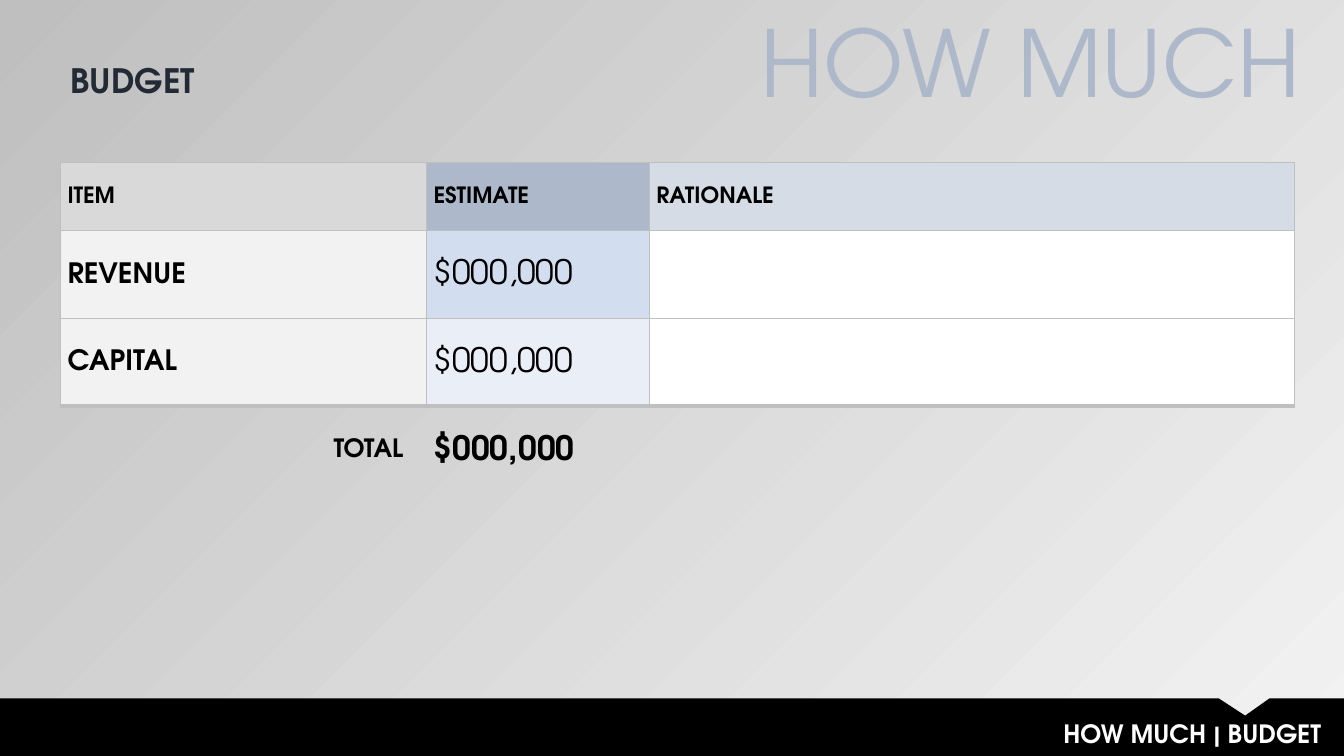
from lxml.etree import SubElement
from pptx import Presentation
from pptx.dml.color import RGBColor
from pptx.enum.text import MSO_ANCHOR, PP_ALIGN
from pptx.oxml.ns import qn
from pptx.util import Inches, Pt

FONT = "TeX Gyre Adventor"
BORDER = "BFBFBF"
COLUMN_WIDTHS = (3.63, 2.21, 6.4)
ROW_HEIGHTS = (0.68, 0.87, 0.87, 0.87)
ROWS = (
    ("ITEM", "ESTIMATE", "RATIONALE"),
    ("REVENUE", "$000,000", ""),
    ("CAPITAL", "$000,000", ""),
    ("TOTAL", "$000,000", ""),
)
FILLS = (
    ("D9D9D9", "ADB9CA", "D6DCE5"),
    ("F2F2F2", "D2DEEF", "FFFFFF"),
    ("F2F2F2", "EAEFF7", "FFFFFF"),
    (None, None, None),
)
LABEL_SIZES = (16, 20, 20, 18)
TOTAL_ROW = len(ROWS) - 1


def rgb(value):
    return RGBColor.from_string(value)


def write(text_frame, text, size, color, bold=False, align=PP_ALIGN.LEFT):
    text_frame.text = text
    paragraph = text_frame.paragraphs[0]
    paragraph.alignment = align
    for run in paragraph.runs:
        run.font.name = FONT
        run.font.size = Pt(size)
        run.font.bold = bold
        run.font.color.rgb = rgb(color)
    return paragraph


def add_text(slide, box, text, size, color, **style):
    shape = slide.shapes.add_textbox(*map(Inches, box))
    shape.text_frame.word_wrap = True
    write(shape.text_frame, text, size, color, **style)


def paint_background(slide):
    fill = slide.background.fill
    fill.gradient()
    fill.gradient_angle = 135
    for stop, (position, color) in zip(fill.gradient_stops, ((0, "F2F2F2"), (1, "BFBFBF"))):
        stop.position = position
        stop.color.rgb = rgb(color)


def add_header(slide, left, top, width):
    add_text(slide, (left + width - 5.46, top, 5.61, 1.21), "HOW MUCH", 66, "ADB9CA",
             align=PP_ALIGN.RIGHT)
    add_text(slide, (left, top + 0.55, 8.9, 0.5), "BUDGET", 24, "222A35", bold=True)


def add_footer(slide, left, top, width, height):
    """Black band with a notch in its top edge above the breadcrumb."""
    right, bottom = left + width, top + height
    outline = [(left + 12.09, top), (left + 12.35, top + 0.17), (left + 12.59, top),
               (right, top), (right, bottom), (left, bottom)]
    builder = slide.shapes.build_freeform(Inches(left), Inches(top))
    builder.add_line_segments([(Inches(x), Inches(y)) for x, y in outline], close=True)
    band = builder.convert_to_shape()
    band.shadow.inherit = False
    band.fill.solid()
    band.fill.fore_color.rgb = rgb("000000")
    band.line.fill.background()
    add_text(slide, (right - 9.19, top + 0.15, 9.06, 0.4), "HOW MUCH | BUDGET", 18, "FFFFFF",
             bold=True, align=PP_ALIGN.RIGHT)


def set_borders(cell, widths):
    """Set left, right, top and bottom border widths in points; 0 hides a side."""
    properties = cell._tc.get_or_add_tcPr()
    for side, width in zip("LRTB", widths):
        line = SubElement(properties, qn(f"a:ln{side}"), w=str(Pt(width)))
        if width:
            solid = SubElement(line, qn("a:solidFill"))
            SubElement(solid, qn("a:srgbClr"), val=BORDER)
        else:
            SubElement(line, qn("a:noFill"))


def border_widths(row):
    if row == TOTAL_ROW:
        return 0, 0, 3, 0
    return 1, 1, 1, 3 if row == TOTAL_ROW - 1 else 1


def fill_cell(cell, row, column):
    set_borders(cell, border_widths(row))
    color = FILLS[row][column]
    if color:
        cell.fill.solid()
        cell.fill.fore_color.rgb = rgb(color)
    else:
        cell.fill.background()
    is_total_label = row == TOTAL_ROW and column == 0
    cell.vertical_anchor = MSO_ANCHOR.MIDDLE
    cell.margin_left = Inches(0.07)
    cell.margin_right = Inches(0.23 if is_total_label else 0.07)
    cell.margin_top = cell.margin_bottom = 0
    is_amount = row > 0 and column == 1
    paragraph = write(
        cell.text_frame, ROWS[row][column],
        size=24 if is_amount else LABEL_SIZES[row],
        color="000000",
        bold=not is_amount or row == TOTAL_ROW,
        align=PP_ALIGN.RIGHT if is_total_label else PP_ALIGN.LEFT,
    )
    paragraph.line_spacing = 1.07


def add_budget_table(slide, left, top):
    box = (left, top, sum(COLUMN_WIDTHS), sum(ROW_HEIGHTS))
    table = slide.shapes.add_table(len(ROWS), len(COLUMN_WIDTHS), *map(Inches, box)).table
    table.first_row = table.horz_banding = False
    for column, width in zip(table.columns, COLUMN_WIDTHS):
        column.width = Inches(width)
    for row, height in zip(table.rows, ROW_HEIGHTS):
        row.height = Inches(height)
    for row in range(len(ROWS)):
        for column in range(len(COLUMN_WIDTHS)):
            fill_cell(table.cell(row, column), row, column)


def main():
    presentation = Presentation()
    presentation.slide_width = Inches(13.33)
    presentation.slide_height = Inches(7.5)
    slide = presentation.slides.add_slide(presentation.slide_layouts[6])
    paint_background(slide)
    add_footer(slide, 0, 6.93, 13.33, 0.57)
    add_header(slide, 0.6, 0, 12.25)
    add_budget_table(slide, 0.6, 1.61)
    presentation.save("out.pptx")


if __name__ == "__main__":
    main()
